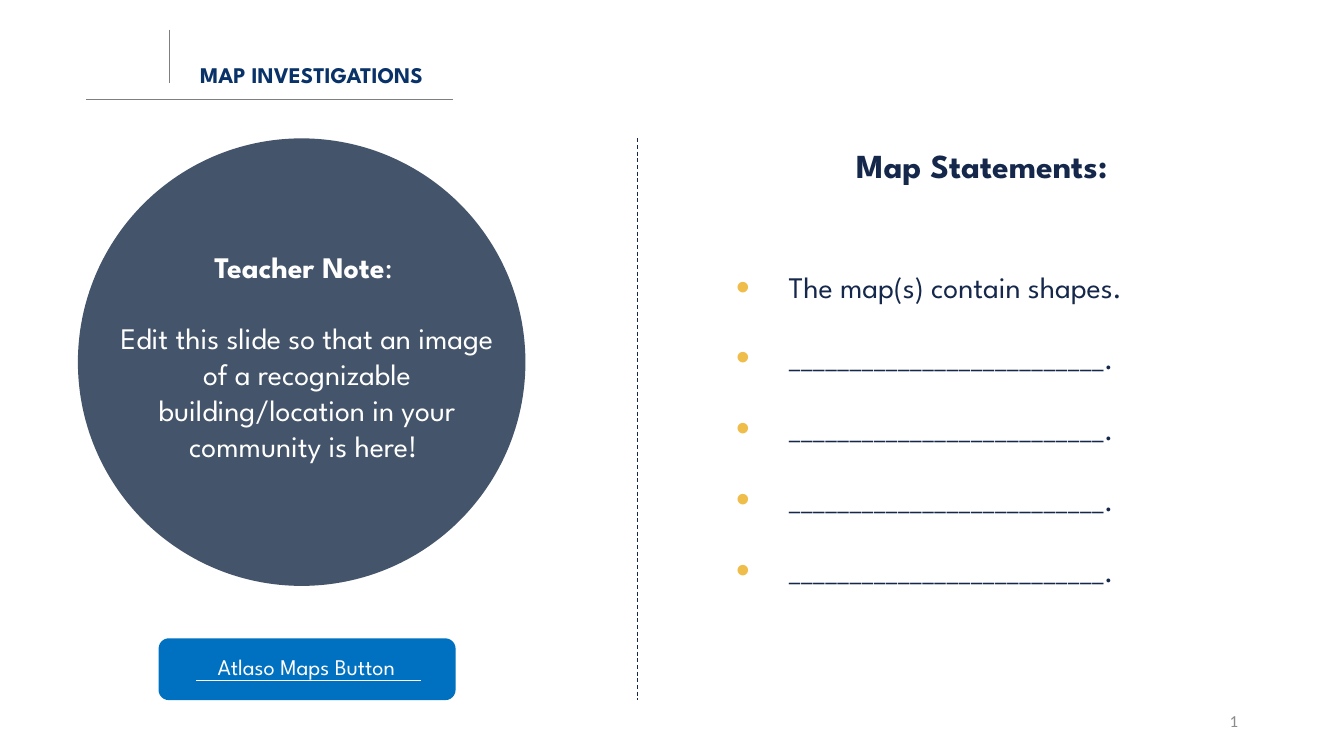
from lxml.etree import SubElement
from pptx import Presentation
from pptx.dml.color import RGBColor
from pptx.enum.dml import MSO_LINE_DASH_STYLE as DASH
from pptx.enum.shapes import MSO_CONNECTOR, MSO_SHAPE
from pptx.enum.text import MSO_ANCHOR as ANCHOR, PP_ALIGN as ALIGN
from pptx.oxml.ns import qn
from pptx.util import Inches, Pt

SLIDE_WIDTH = 10
SLIDE_HEIGHT = SLIDE_WIDTH * 9 / 16
NAVY, WHITE, GOLD, GRAY = "15284B", "FFFFFF", "EEBD4A", "7F7F7F"
SPARTAN = "League Spartan"

BLANK_LINE = "_" * 26 + "."
STATEMENTS = ["The map(s) contain shapes."] + [BLANK_LINE] * 4
FIRST_TOP, LAST_TOP = 1.95, 4.06
TEACHER_NOTE = [
    [("Teacher Note", True), (": ", False)],
    [("Edit this slide so that an image of a recognizable "
      "building/location in your community is here! ", False)],
]
# start x, start y, end x, end y, colour, dash
RULES = [
    (0.64, 0.74, 3.37, 0.74, GRAY, None),
    (1.26, 0.22, 1.26, 0.62, GRAY, None),
    (1.46, 5.06, 3.13, 5.06, WHITE, None),
    (4.74, 1.03, 4.74, 5.21, NAVY, DASH.DASH),
]
# shape, position and size, fill
PANELS = [
    (MSO_SHAPE.OVAL, (0.58, 1.03, 3.33, 3.33), "44546A"),
    (MSO_SHAPE.ROUNDED_RECTANGLE, (1.18, 4.75, 2.21, 0.46), "0070C0"),
]


def rgb(value):
    return RGBColor.from_string(value)


def add_bullet(paragraph, color, percent=130, indent=0.39):
    props = paragraph._p.get_or_add_pPr()
    props.set("marL", str(Inches(indent)))
    props.set("indent", str(-Inches(indent)))
    bullet_color = SubElement(props, qn("a:buClr"))
    SubElement(bullet_color, qn("a:srgbClr"), val=color)
    SubElement(props, qn("a:buSzPct"), val=str(percent * 1000))
    SubElement(props, qn("a:buFont"), typeface="Arial")
    SubElement(props, qn("a:buChar"), char="•")


def add_text(slide, content, box, size, color, bold=False, font=SPARTAN,
             align=ALIGN.LEFT, anchor=ANCHOR.TOP, line_spacing=None,
             gap=None, after=None, bullet=None):
    """Content is a string, or a list of paragraphs made of (text, bold) runs."""
    paragraphs = [[(content, bold)]] if isinstance(content, str) else content
    frame = slide.shapes.add_textbox(*map(Inches, box)).text_frame
    frame.word_wrap = True
    frame.vertical_anchor = anchor
    for index, runs in enumerate(paragraphs):
        paragraph = frame.add_paragraph() if index else frame.paragraphs[0]
        paragraph.alignment = align
        if line_spacing:
            paragraph.line_spacing = line_spacing
        if index and gap:
            paragraph.space_before = Pt(gap)
        if after:
            paragraph.space_after = Pt(after)
        if bullet:
            add_bullet(paragraph, bullet)
        for text, is_bold in runs:
            run = paragraph.add_run()
            run.text = text
            run.font.name = font
            run.font.size = Pt(size)
            run.font.bold = is_bold
            run.font.color.rgb = rgb(color)


def add_panel(slide, kind, box, fill):
    panel = slide.shapes.add_shape(kind, *map(Inches, box))
    panel.shadow.inherit = False
    panel.fill.solid()
    panel.fill.fore_color.rgb = rgb(fill)
    panel.line.fill.background()


def add_rule(slide, x1, y1, x2, y2, color, dash):
    rule = slide.shapes.add_connector(
        MSO_CONNECTOR.STRAIGHT, *map(Inches, (x1, y1, x2, y2)))
    rule.line.color.rgb = rgb(color)
    rule.line.width = Pt(0.5)
    if dash:
        rule.line.dash_style = dash
    SubElement(rule._element.spPr, qn("a:effectLst"))


def main():
    deck = Presentation()
    deck.slide_width = Inches(SLIDE_WIDTH)
    deck.slide_height = Inches(SLIDE_HEIGHT)
    slide = deck.slides.add_slide(deck.slide_layouts[6])

    for panel in PANELS:
        add_panel(slide, *panel)
    for rule in RULES:
        add_rule(slide, *rule)

    add_text(slide, "MAP INVESTIGATIONS", (1.39, 0.43, 3.42, 0.27), 12,
             "083268", bold=True, line_spacing=0.9)
    add_text(slide, "Map Statements:", (4.61, 1.03, 5.39, 0.4), 18, NAVY,
             bold=True, align=ALIGN.CENTER)
    add_text(slide, TEACHER_NOTE, (0.78, 1.8, 3.01, 1.72), 16, WHITE,
             align=ALIGN.CENTER, gap=19)
    add_text(slide, "Atlaso Maps Button", (1.2, 4.81, 2.16, 0.3), 12, WHITE,
             align=ALIGN.CENTER)
    add_text(slide, "1", (7.06, 5.21, 2.25, 0.3), 9, "8C8C8C", font="Calibri",
             align=ALIGN.RIGHT, anchor=ANCHOR.MIDDLE)

    step = (LAST_TOP - FIRST_TOP) / (len(STATEMENTS) - 1)
    for row, statement in enumerate(STATEMENTS):
        add_text(slide, statement, (5.38, FIRST_TOP + row * step, 4.3, 0.37),
                 16, NAVY, after=12, bullet=GOLD)

    deck.save("out.pptx")


if __name__ == "__main__":
    main()
